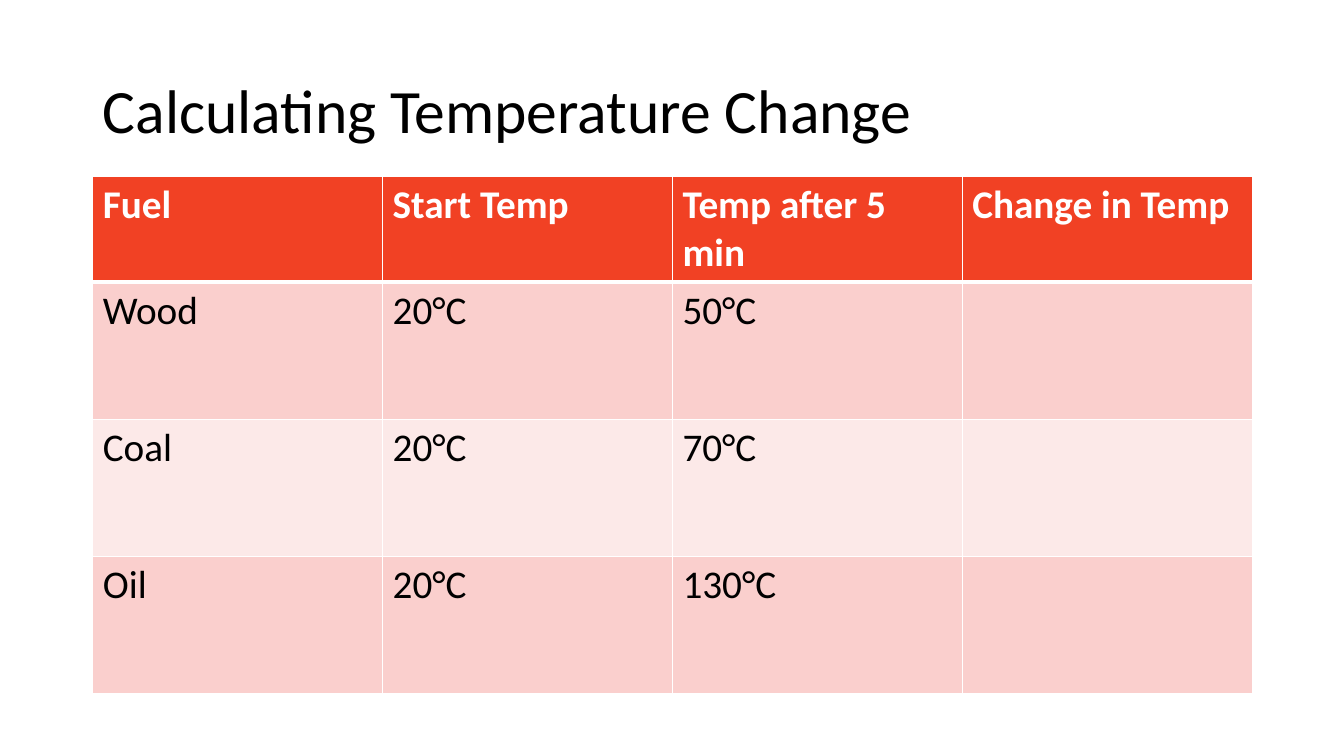
"""Build a slide with a table for calculating temperature change."""
from lxml import etree
from pptx import Presentation
from pptx.dml.color import RGBColor
from pptx.enum import text
from pptx.oxml import ns
from pptx.util import Inches, Pt

HEADING = "Calculating Temperature Change"
READINGS = [
    ("Fuel", "Start Temp", "Temp after 5 min", "Change in Temp"),
    ("Wood", "20°C", "50°C", ""),
    ("Coal", "20°C", "70°C", ""),
    ("Oil", "20°C", "130°C", ""),
]
LEFT, WIDTH = 0.92, 11.5
TABLE_TOP, HEADER_HEIGHT, FUEL_HEIGHT = 1.75, 0.75, 1.36
BAND_FILLS = ("FCE9E8", "FACFCD")
HEADER_FORMAT = {"name": "Calibri", "size": Pt(28), "bold": True}
FUEL_FORMAT = {**HEADER_FORMAT, "bold": False}
HEADING_FORMAT = {"name": "Calibri", "size": Pt(44), "bold": False}


def set_font(font, values, color):
    for key, value in values.items():
        setattr(font, key, value)
    font.color.rgb = RGBColor.from_string(color)


def add_borders(cell, bottom_width, top_width):
    properties = cell._tc.get_or_add_tcPr()
    widths = {"lnL": 1, "lnR": 1, "lnT": top_width, "lnB": bottom_width}
    for side, width in widths.items():
        border = etree.SubElement(properties, ns.qn(f"a:{side}"), w=str(Pt(width)))
        fill = etree.SubElement(border, ns.qn("a:solidFill"))
        etree.SubElement(fill, ns.qn("a:srgbClr"), val="FFFFFF")


def add_heading(slide):
    heading = slide.shapes.title
    box = {"left": LEFT, "top": 0.4, "width": WIDTH, "height": 1.45}
    for key, value in box.items():
        setattr(heading, key, Inches(value))
    heading.text_frame.text = HEADING
    heading.text_frame.vertical_anchor = text.MSO_ANCHOR.MIDDLE
    heading.text_frame.auto_size = text.MSO_AUTO_SIZE.NONE
    line = heading.text_frame.paragraphs[0]
    line.alignment = text.PP_ALIGN.LEFT
    line.line_spacing = 0.9
    set_font(line.runs[0].font, HEADING_FORMAT, "000000")


def add_readings(slide):
    height = HEADER_HEIGHT + FUEL_HEIGHT * (len(READINGS) - 1)
    table = slide.shapes.add_table(
        len(READINGS), len(READINGS[0]), Inches(LEFT), Inches(TABLE_TOP),
        Inches(WIDTH), Inches(height)).table
    for r, reading in enumerate(READINGS):
        header = r == 0
        table.rows[r].height = Inches(HEADER_HEIGHT if header else FUEL_HEIGHT)
        for c, value in enumerate(reading):
            cell = table.cell(r, c)
            add_borders(cell, 3 if header else 1, 3 if r == 1 else 1)
            cell.fill.solid()
            cell.fill.fore_color.rgb = RGBColor.from_string(
                "F14124" if header else BAND_FILLS[r % 2])
            cell.text = value
            for run in cell.text_frame.paragraphs[0].runs:
                set_font(run.font, HEADER_FORMAT if header else FUEL_FORMAT,
                         "FFFFFF" if header else "000000")


def main():
    deck = Presentation()
    deck.slide_width, deck.slide_height = Inches(13.33), Inches(7.5)
    slide = deck.slides.add_slide(deck.slide_layouts[5])
    add_heading(slide)
    add_readings(slide)
    deck.save("out.pptx")


if __name__ == "__main__":
    main()
